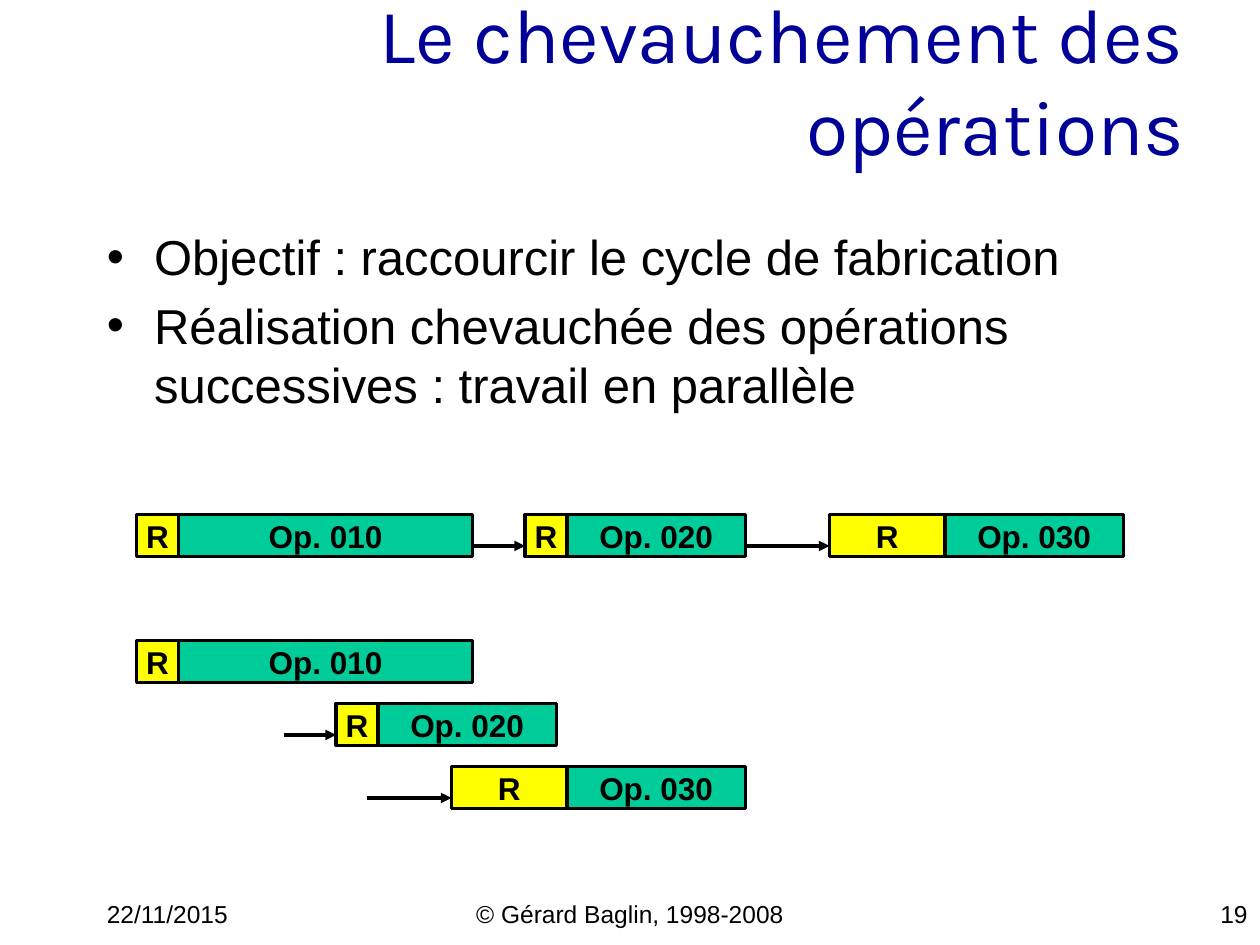
import pptx
import pptx.dml.color
import pptx.enum.shapes
import pptx.enum.text
import pptx.util
from lxml import etree
from pptx.oxml.ns import qn

EMU_PER_PX = 9525
BLACK, NAVY, YELLOW, GREEN = "000000", "000099", "FFFF00", "00CC99"
ALIGN = pptx.enum.text.PP_ALIGN
ANCHOR = pptx.enum.text.MSO_ANCHOR
BAR_HEIGHT = 32
ARROW_DROP = 24
OPERATIONS = [("Op. 010", 32, 224, 0), ("Op. 020", 32, 136, 40), ("Op. 030", 88, 136, 64)]
SEQUENTIAL_STARTS = [(104, 392), (400, 392), (632, 392)]
OVERLAPPED_STARTS = [(104, 488), (256, 536), (344, 584)]


def px(length):
    return pptx.util.Emu(length * EMU_PER_PX)


def color(value):
    return pptx.dml.color.RGBColor.from_string(value)


def format_text(text_frame, size, align, font="Arial", ink=BLACK, bold=False):
    for paragraph in text_frame.paragraphs:
        paragraph.alignment = align
        for run in paragraph.runs:
            run.font.size = pptx.util.Pt(size)
            run.font.name = font
            run.font.bold = bold
            run.font.color.rgb = color(ink)


def add_text(slide, box, text, size, align=ALIGN.LEFT, anchor=ANCHOR.TOP, **style):
    shape = slide.shapes.add_textbox(*map(px, box))
    text_frame = shape.text_frame
    text_frame.word_wrap = True
    text_frame.vertical_anchor = anchor
    text_frame.text = text
    format_text(text_frame, size, align, **style)
    return text_frame


def add_bullets(text_frame, indent, space_before):
    for paragraph in text_frame.paragraphs:
        paragraph.space_before = pptx.util.Pt(space_before)
        properties = paragraph._p.get_or_add_pPr()
        properties.set("marL", str(px(indent)))
        properties.set("indent", str(px(-indent)))
        etree.SubElement(properties, qn("a:buFont"), typeface="Arial")
        etree.SubElement(properties, qn("a:buChar"), char="•")


def add_bar(slide, left, top, width, text, fill):
    rectangle = pptx.enum.shapes.MSO_SHAPE.RECTANGLE
    shape = slide.shapes.add_shape(rectangle, px(left), px(top), px(width), px(BAR_HEIGHT))
    shape.shadow.inherit = False
    shape.fill.solid()
    shape.fill.fore_color.rgb = color(fill)
    shape.line.color.rgb = color(BLACK)
    shape.line.width = pptx.util.Pt(2)
    text_frame = shape.text_frame
    text_frame.word_wrap = False
    text_frame.vertical_anchor = ANCHOR.MIDDLE
    text_frame.text = text
    format_text(text_frame, 18, ALIGN.CENTER, bold=True)


def add_arrow(slide, start, end, y):
    straight = pptx.enum.shapes.MSO_CONNECTOR.STRAIGHT
    connector = slide.shapes.add_connector(straight, px(start), px(y), px(end), px(y))
    connector.line.color.rgb = color(BLACK)
    connector.line.width = pptx.util.Pt(2)
    etree.SubElement(connector.line._get_or_add_ln(), qn("a:tailEnd"), type="triangle")
    etree.SubElement(connector._element.spPr, qn("a:effectLst"))


def add_schedule(slide, starts):
    for (left, top), (name, setup, duration, transfer) in zip(starts, OPERATIONS):
        add_bar(slide, left, top, setup, "R", YELLOW)
        add_bar(slide, left + setup, top, duration, name, GREEN)
        if transfer:
            add_arrow(slide, left - transfer, left, top + ARROW_DROP)


def main():
    presentation = pptx.Presentation()
    presentation.slide_width = px(960)
    presentation.slide_height = px(720)
    slide = presentation.slides.add_slide(presentation.slide_layouts[6])

    add_text(slide, (72, 680, 200, 24), "22/11/2015", 14)
    add_text(slide, (328, 680, 304, 24), "© Gérard Baglin, 1998-2008", 14, ALIGN.CENTER)
    add_text(slide, (760, 680, 200, 24), "19", 14, ALIGN.RIGHT)
    add_text(slide, (0, 0, 912, 120), "Le chevauchement des opérations", 44,
             ALIGN.RIGHT, ANCHOR.MIDDLE, font="Karla", ink=NAVY)
    goals = add_text(slide, (72, 168, 816, 176),
                     "Objectif : raccourcir le cycle de fabrication\n"
                     "Réalisation chevauchée des opérations successives : travail en parallèle", 28)
    add_bullets(goals, 36, 5.6)

    for starts in (SEQUENTIAL_STARTS, OVERLAPPED_STARTS):
        add_schedule(slide, starts)

    presentation.save("out.pptx")


if __name__ == "__main__":
    main()
